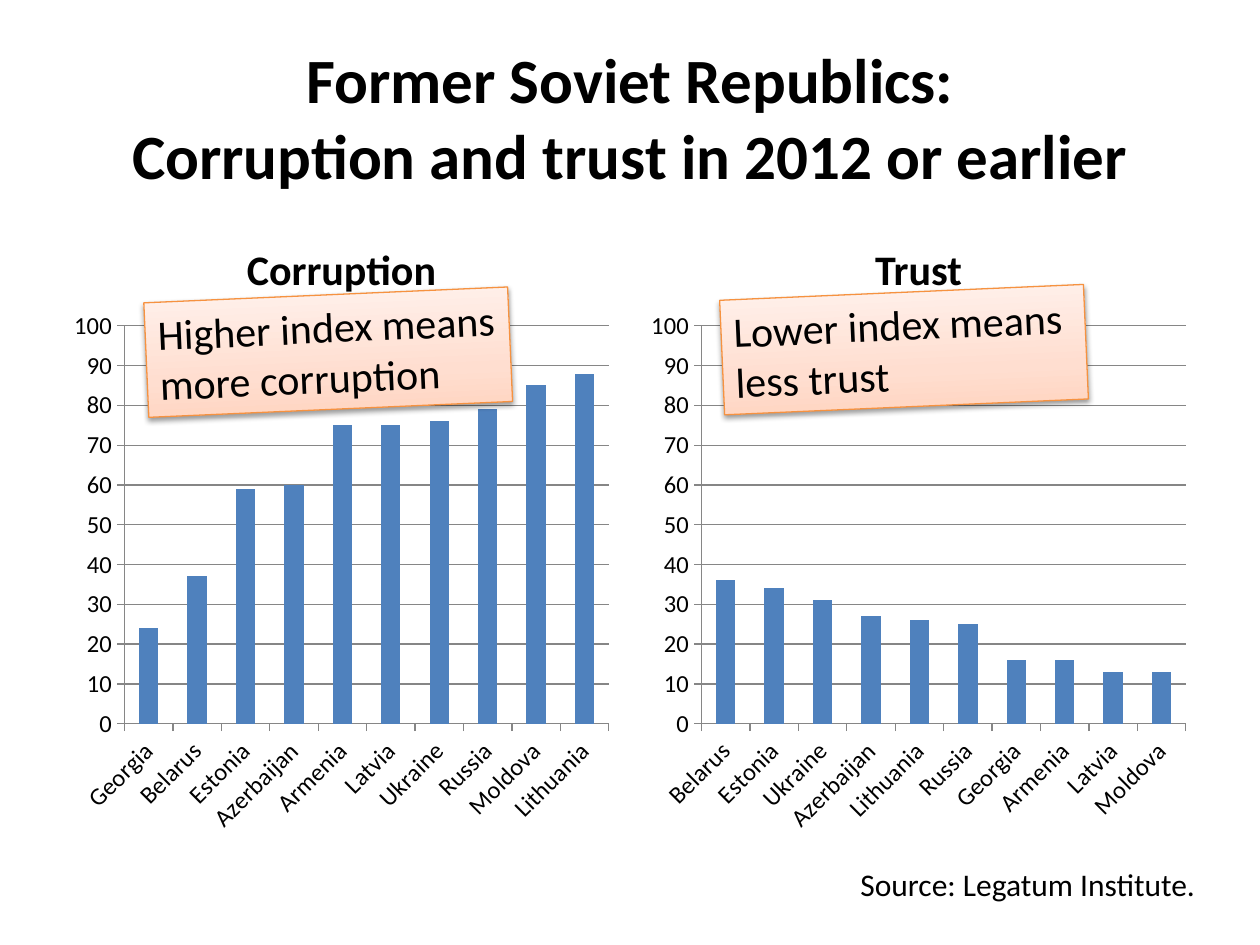
from lxml import etree
from pptx import Presentation
from pptx import util as u
from pptx.chart import data
from pptx.dml.color import RGBColor
from pptx.enum import chart as ch, shapes, text
from pptx.oxml import ns

Inches, Pt = u.Inches, u.Pt
FONT = "Calibri"
BLACK = RGBColor(0x00, 0x00, 0x00)
BAR_BLUE = RGBColor(0x4F, 0x81, 0xBD)
AXIS_GREY = RGBColor(0x86, 0x86, 0x86)
NOTE_ORANGE = RGBColor(0xF6, 0x92, 0x40)
NOTE_STOPS = [
    (0, RGBColor(0xFF, 0xD2, 0xBD)),
    (35, RGBColor(0xFF, 0xDE, 0xD0)),
    (100, RGBColor(0xFF, 0xF2, 0xED)),
]

CORRUPTION = {
    "Georgia": 24, "Belarus": 37, "Estonia": 59, "Azerbaijan": 60, "Armenia": 75,
    "Latvia": 75, "Ukraine": 76, "Russia": 79, "Moldova": 85, "Lithuania": 88,
}
TRUST = {
    "Belarus": 36, "Estonia": 34, "Ukraine": 31, "Azerbaijan": 27, "Lithuania": 26,
    "Russia": 25, "Georgia": 16, "Armenia": 16, "Latvia": 13, "Moldova": 13,
}


def style_font(font, size, bold=False):
    font.name, font.size, font.bold = FONT, Pt(size), bold
    font.color.rgb = BLACK


def write_lines(frame, lines, size, bold=False, align=text.PP_ALIGN.LEFT,
                anchor=text.MSO_ANCHOR.TOP, wrap=True):
    frame.word_wrap = wrap
    frame.vertical_anchor = anchor
    paragraph = frame.paragraphs[0]
    paragraph.alignment = align
    for i, line in enumerate(lines):
        if i:
            paragraph.add_line_break()
        run = paragraph.add_run()
        run.text = line
        style_font(run.font, size, bold)


def add_text(slide, box, lines, size, **options):
    frame = slide.shapes.add_textbox(*map(Inches, box)).text_frame
    write_lines(frame, lines, size, **options)


def add_index_chart(slide, box, index):
    chart_data = data.CategoryChartData()
    chart_data.categories = list(index)
    chart_data.add_series("Series 1", list(index.values()))
    chart = slide.shapes.add_chart(
        ch.XL_CHART_TYPE.COLUMN_CLUSTERED, *map(Inches, box), chart_data).chart
    chart.has_legend = chart.has_title = False
    style_font(chart.font, 10)

    plot = chart.plots[0]
    plot.gap_width = 150
    plot.vary_by_categories = False
    bars = plot.series[0].format.fill
    bars.solid()
    bars.fore_color.rgb = BAR_BLUE

    for axis in (chart.category_axis, chart.value_axis):
        axis.major_tick_mark = ch.XL_TICK_MARK.OUTSIDE
        axis.minor_tick_mark = ch.XL_TICK_MARK.NONE
        axis.format.line.color.rgb = AXIS_GREY
        axis.format.line.width = Pt(0.75)
        style_font(axis.tick_labels.font, 14)

    values = chart.value_axis
    values.minimum_scale, values.maximum_scale, values.major_unit = 0, 100, 10
    values.has_major_gridlines = True
    values.major_gridlines.format.line.color.rgb = AXIS_GREY
    values.major_gridlines.format.line.width = Pt(0.75)


def add_color(parent, rgb):
    return etree.SubElement(parent, ns.qn("a:srgbClr"), val=str(rgb))


def add_note(slide, box, message):
    note = slide.shapes.add_shape(shapes.MSO_SHAPE.RECTANGLE, *map(Inches, box))
    note.rotation = 357.5
    note.line.color.rgb = NOTE_ORANGE
    note.line.width = Pt(0.75)

    # Three-stop gradient, darkest at the bottom
    note.fill.gradient()
    note.fill.gradient_angle = 90
    stops = note.element.spPr.find(".//" + ns.qn("a:gsLst"))
    for stop in list(stops):
        stops.remove(stop)
    for position, rgb in NOTE_STOPS:
        add_color(etree.SubElement(stops, ns.qn("a:gs"), pos=str(position * 1000)), rgb)

    # Soft shadow straight down
    note.shadow.inherit = False
    effects = note.element.spPr.find(ns.qn("a:effectLst"))
    shadow = etree.SubElement(
        effects, ns.qn("a:outerShdw"), blurRad=str(Pt(3.1)), dist=str(Pt(1.6)),
        dir="5400000", rotWithShape="0")
    etree.SubElement(add_color(shadow, BLACK), ns.qn("a:alpha"), val="38000")

    write_lines(note.text_frame, [message], 24)


def add_panel(slide, box, heading, index, note_offset, message):
    left, top, width, height = box
    heading_height = 0.7
    add_text(slide, (left, top, width, heading_height), [heading], 24, bold=True,
             align=text.PP_ALIGN.CENTER, anchor=text.MSO_ANCHOR.BOTTOM)
    add_index_chart(
        slide, (left, top + heading_height, width, height - heading_height), index)
    dx, dy = note_offset
    add_note(slide, (left + dx, top + dy, 2.89, 0.91), message)


def main():
    deck = Presentation()
    deck.slide_width, deck.slide_height = Inches(10), Inches(7.5)
    slide = deck.slides.add_slide(deck.slide_layouts[6])

    # Title
    add_text(slide, (0.5, 0.3, 9, 1.25),
             ["Former Soviet Republics:", "Corruption and trust in 2012 or earlier"],
             36, bold=True, align=text.PP_ALIGN.CENTER, anchor=text.MSO_ANCHOR.MIDDLE)

    # Two chart panels side by side
    add_panel(slide, (0.5, 1.68, 4.42, 5.02), "Corruption", CORRUPTION,
              (0.66, 0.66), "Higher index means more corruption")
    add_panel(slide, (5.08, 1.68, 4.42, 5.02), "Trust", TRUST,
              (0.65, 0.64), "Lower index means less trust")

    # Source
    add_text(slide, (6.73, 6.82, 2.89, 0.4), ["Source: Legatum Institute."], 18, wrap=False)

    deck.save("out.pptx")


if __name__ == "__main__":
    main()
